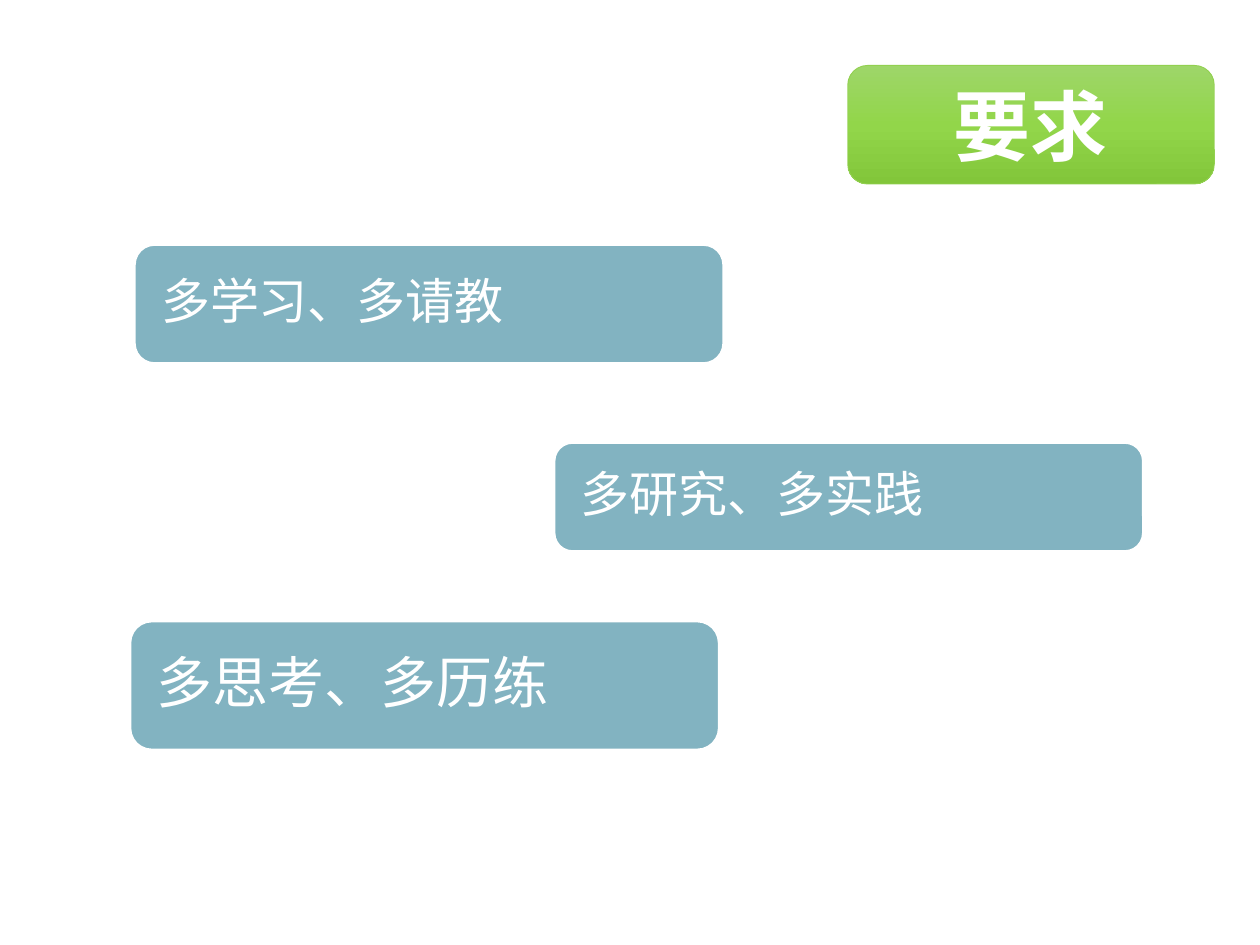
import copy
import pptx
import pptx.util
import pptx.dml.color
import pptx.enum.shapes
import pptx.enum.text

Cm = pptx.util.Cm
Pt = pptx.util.Pt
ROUND = pptx.enum.shapes.MSO_SHAPE.ROUNDED_RECTANGLE
ALIGN = pptx.enum.text.PP_ALIGN
MIDDLE = pptx.enum.text.MSO_ANCHOR.MIDDLE
WHITE = "FFFFFF"


def tint(color, code):
    color.rgb = pptx.dml.color.RGBColor.from_string(code)


def panel(shapes, box, edge, width):
    shape = shapes.add_shape(ROUND, *map(Cm, box))
    shape.shadow.inherit = False
    tint(shape.line.color, edge)
    shape.line.width = Pt(width)
    return shape


def write(frame, text, size, align, bold=False):
    frame.word_wrap = True
    frame.vertical_anchor = MIDDLE
    para = frame.paragraphs[0]
    para.alignment = align
    run = para.add_run()
    run.text = text
    run.font.name = "Calibri"
    run.font.size = Pt(size)
    run.font.bold = bold
    tint(run.font.color, WHITE)
    return para


def title(slide, box, text):
    shape = panel(slide.shapes, box, "92D050", 0.5)
    shape.fill.gradient()
    shape.fill.gradient_angle = 270
    first = shape.fill.gradient_stops[0]._gs
    first.addnext(copy.deepcopy(first))
    shades = (0, "9ED669"), (0.5, "92D64A"), (1, "82C63A")
    for stop, (place, code) in zip(shape.fill.gradient_stops, shades):
        stop.position = place
        tint(stop.color, code)
    write(shape.text_frame, text, 44, ALIGN.CENTER, True)


def card(slide, box, text, size):
    left, top, width, height = box
    group = slide.shapes.add_group_shape()
    shape = panel(group.shapes, box, WHITE, 1)
    shape.fill.solid()
    tint(shape.fill.fore_color, "82B3C1")
    dx, dy = 0.08, 0.12
    inner = left + dx, top + dy, width - 2 * dx, height - 2 * dy
    frame = group.shapes.add_textbox(*map(Cm, inner)).text_frame
    frame.margin_left = frame.margin_right = Cm(0.45)
    frame.margin_top = frame.margin_bottom = 0
    para = write(frame, text, size, ALIGN.LEFT)
    para.line_spacing = 0.9
    para.space_after = Pt(round(0.35 * size, 1))


def main():
    deck = pptx.Presentation()
    deck.slide_width, deck.slide_height = Cm(25.4), Cm(19.05)
    slide = deck.slides.add_slide(deck.slide_layouts[6])
    title(slide, (17.09, 1.32, 7.39, 2.39), "要求")
    cards = (
        (2.72, 4.94, 2.38, "多学习、多请教", 28),
        (11.18, 8.93, 2.18, "多研究、多实践", 28),
        (2.63, 12.53, 2.58, "多思考、多历练", 32),
    )
    for left, top, height, text, size in cards:
        card(slide, (left, top, 11.86, height), text, size)
    deck.save("out.pptx")


if __name__ == "__main__":
    main()
